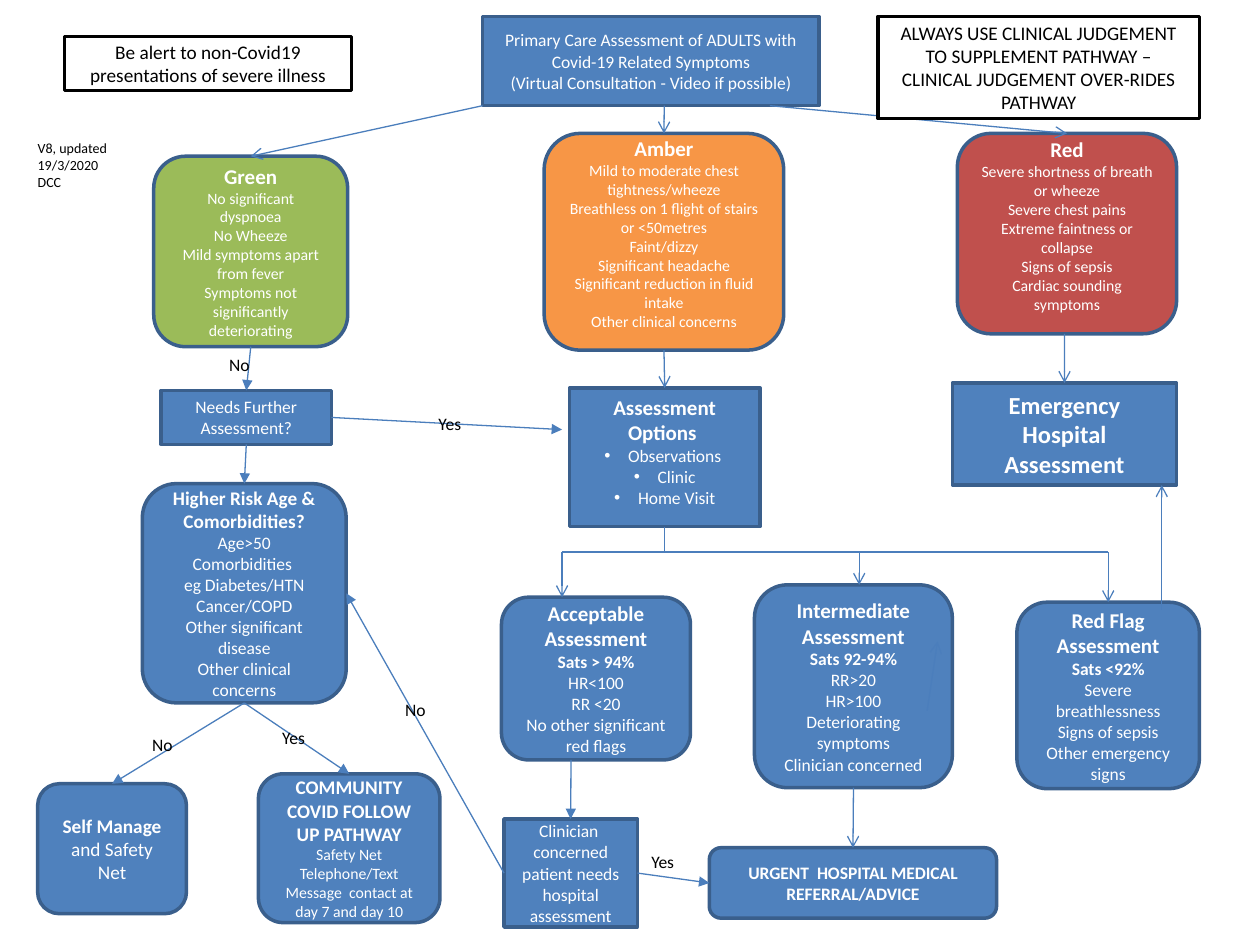
from dataclasses import dataclass

from lxml import etree
from pptx import Presentation
from pptx.dml.color import RGBColor
from pptx.enum.shapes import MSO_CONNECTOR, MSO_SHAPE
from pptx.enum.text import MSO_ANCHOR, MSO_AUTO_SIZE, PP_ALIGN
from pptx.oxml.ns import qn
from pptx.util import Cm, Pt

RECT, ROUND = MSO_SHAPE.RECTANGLE, MSO_SHAPE.ROUNDED_RECTANGLE
STRAIGHT = MSO_CONNECTOR.STRAIGHT
MIDDLE, CENTER, NO_FIT = MSO_ANCHOR.MIDDLE, PP_ALIGN.CENTER, MSO_AUTO_SIZE.NONE
TOP, LEFT, BOTTOM, RIGHT = range(4)
OPEN, SOLID = "arrow", "triangle"


@dataclass(frozen=True)
class Theme:
    font: str = "Calibri"
    blue: str = "4F81BD"
    green: str = "9BBB59"
    amber: str = "F79646"
    red: str = "C0504D"
    outline: str = "3A5F8C"
    link: str = "4B7EBC"
    white: str = "FFFFFF"
    black: str = "000000"
    emergency: int = 14
    heading: int = 12
    note: int = 11
    body: int = 10
    symptom: int = 9
    version: int = 8


THEME = Theme()


def add_text(paragraph, text, size=THEME.body, bold=False, color=THEME.white):
    run = paragraph.add_run()
    run.text = text
    run.font.name = THEME.font
    run.font.size = Pt(size)
    run.font.bold = bold
    run.font.color.rgb = RGBColor.from_string(color)


def body(*lines, size=THEME.body, bold=False):
    return [[(line, size, bold)] for line in lines]


def heading(text, size=THEME.heading):
    return body(text, size=size, bold=True)


def fill_frame(frame, paragraphs, color, align=None):
    frame.word_wrap = True
    for index, runs in enumerate(paragraphs):
        paragraph = frame.add_paragraph() if index else frame.paragraphs[0]
        paragraph.alignment = align
        for text, size, bold in runs:
            add_text(paragraph, text, size=size, bold=bold, color=color)


def style_box(box, paragraphs, fill, outline=THEME.outline, color=THEME.white):
    box.fill.solid()
    box.fill.fore_color.rgb = RGBColor.from_string(fill)
    box.line.color.rgb = RGBColor.from_string(outline)
    box.line.width = Pt(2)
    box.text_frame.auto_size = NO_FIT
    box.text_frame.vertical_anchor = MIDDLE
    fill_frame(box.text_frame, paragraphs, color, CENTER)


def add_box(slide, outline_kind, place, paragraphs, fill=THEME.blue, **style):
    box = slide.shapes.add_shape(outline_kind, *map(Cm, place))
    box.shadow.inherit = False
    style_box(box, paragraphs, fill, **style)
    return box


def add_title(slide, place, lines):
    title = slide.shapes.title
    title.left, title.top, title.width, title.height = map(Cm, place)
    style_box(title, body(*lines), THEME.blue)


def add_note(slide, place, text):
    add_box(slide, RECT, place, body(text, size=THEME.note),
            fill=THEME.white, outline=THEME.black, color=THEME.black)


def add_label(slide, place, *lines, size=THEME.body):
    label = slide.shapes.add_textbox(*map(Cm, place))
    fill_frame(label.text_frame, body(*lines, size=size), THEME.black)


def add_bullets(paragraphs):
    for paragraph in paragraphs:
        properties = paragraph._p.get_or_add_pPr()
        properties.set("marL", str(Cm(0.48)))
        properties.set("indent", str(-Cm(0.48)))
        etree.SubElement(properties, qn("a:buFont"), typeface="Arial")
        etree.SubElement(properties, qn("a:buChar"), char="•")


def add_link(slide, start, end, head=None):
    joins = [not isinstance(place[0], (int, float)) for place in (start, end)]
    points = [(0, 0) if joined else tuple(map(Cm, place))
              for joined, place in zip(joins, (start, end))]
    link = slide.shapes.add_connector(STRAIGHT, *points[0], *points[1])
    if joins[0]:
        link.begin_connect(*start)
    if joins[1]:
        link.end_connect(*end)
    link.line.color.rgb = RGBColor.from_string(THEME.link)
    link.line.width = Pt(0.75)
    properties = link._element.spPr
    if head:
        etree.SubElement(properties.find(qn("a:ln")), qn("a:tailEnd"), type=head)
    etree.SubElement(properties, qn("a:effectLst"))


def add_triage(slide):
    def triage(place, name, fill, *symptoms):
        return add_box(slide, ROUND, place, heading(name)
                       + body(*symptoms, size=THEME.symptom), fill=fill)

    green = triage((3.1, 3.15, 3.91, 3.84), "Green", THEME.green,
                   "No significant dyspnoea", "No Wheeze",
                   "Mild symptoms apart from fever",
                   "Symptoms not significantly deteriorating")
    amber = triage((10.97, 2.69, 4.83, 4.37), "Amber", THEME.amber,
                   "Mild to moderate chest tightness/wheeze",
                   "Breathless on 1 flight of stairs or <50metres",
                   "Faint/dizzy", "Significant headache",
                   "Significant reduction in fluid intake",
                   "Other clinical concerns")
    red = triage((19.3, 2.69, 4.42, 4.04), "Red", THEME.red,
                 "Severe shortness of breath or wheeze", "Severe chest pains",
                 "Extreme faintness or collapse", "Signs of sepsis",
                 "Cardiac sounding symptoms")
    for severe in (amber, red):
        severe.text_frame.margin_bottom = Cm(0.47)
    return green, amber, red


def add_options(slide):
    options = add_box(slide, RECT, (11.48, 7.82, 3.84, 2.8),
                      heading("Assessment Options ")
                      + body("Observations ", "Clinic", "Home Visit"))
    options.text_frame.margin_top = Cm(0)
    options.text_frame.margin_bottom = Cm(0.25)
    add_bullets(options.text_frame.paragraphs[1:])
    return options


def add_assessment(slide, place, name, sats, *signs):
    return add_box(slide, ROUND, place,
                   heading(name) + heading(sats, THEME.body) + body(*signs))


def main():
    prs = Presentation()
    prs.slide_width, prs.slide_height = Cm(25.4), Cm(19.05)
    slide = prs.slides.add_slide(prs.slide_layouts[5])

    add_title(slide, (9.73, 0.33, 6.78, 1.8),
              ("Primary Care Assessment of ADULTS with",
               "Covid-19 Related Symptoms",
               "(Virtual Consultation - Video if possible)"))
    green, amber, red = add_triage(slide)
    emergency = add_box(slide, RECT, (19.2, 7.72, 4.52, 2.06),
                        heading("Emergency Hospital Assessment", THEME.emergency))
    further = add_box(slide, RECT, (3.25, 7.87, 3.43, 1.09),
                      body("Needs Further Assessment?"))
    risk = add_box(slide, ROUND, (2.87, 9.75, 4.11, 4.42),
                   heading("Higher Risk Age & Comorbidities?", THEME.note)
                   + body("Age>50", "Comorbidities ", "eg Diabetes/HTN", "Cancer/COPD",
                          "Other significant disease", "Other clinical concerns"))
    options = add_options(slide)
    self_manage = add_box(slide, ROUND, (0.76, 15.8, 3, 2.62),
                          [[("Self Manage ", THEME.note, True),
                            ("and Safety Net", THEME.note, False)]])
    community = add_box(slide, ROUND, (5.21, 15.6, 3.66, 3),
                        heading("COMMUNITY COVID FOLLOW UP PATHWAY", THEME.note)
                        + body("Safety Net",
                               "Telephone/Text Message  contact at day 7 and day 10",
                               size=THEME.symptom))
    red_flag = add_assessment(slide, (20.5, 12.14, 3.68, 3.76), "Red Flag Assessment",
                              "Sats <92%", "Severe breathlessness", "Signs of sepsis",
                              "Other emergency signs")
    add_assessment(slide, (10.11, 12.04, 3.81, 3.28), "Acceptable Assessment",
                   "Sats > 94%", "HR<100", "RR <20", "No other significant red flags")
    intermediate = add_assessment(slide, (15.21, 11.79, 3.99, 4.09),
                                  "Intermediate Assessment", "Sats 92-94%", "RR>20",
                                  "HR>100", "Deteriorating symptoms",
                                  "Clinician concerned")
    urgent = add_box(slide, ROUND, (14.3, 17.09, 5.79, 1.42),
                     heading("URGENT  HOSPITAL MEDICAL REFERRAL/ADVICE", THEME.body))
    concerned = add_box(slide, RECT, (10.16, 16.51, 2.69, 2.18),
                        body("Clinician  concerned patient needs hospital assessment"))

    for start, end, head in (
        ((9.73, 2.13), (green, TOP), OPEN),
        ((13.39, 2.13), (amber, TOP), OPEN),
        ((15.52, 2.13), (red, TOP), OPEN),
        ((amber, BOTTOM), (options, TOP), OPEN),
        ((21.46, 6.73), (emergency, TOP), OPEN),
        ((18.69, 14.33), (18.9, 12.93), OPEN),
        ((options, BOTTOM), (13.4, 11.13), None),
        ((11.33, 11.13), (22.34, 11.13), None),
        ((11.33, 11.13), (11.33, 12.04), OPEN),
        ((17.32, 11.13), (17.32, 11.79), OPEN),
        ((22.34, 11.13), (red_flag, TOP), OPEN),
        ((intermediate, BOTTOM), (urgent, TOP), OPEN),
        ((23.42, 12.29), (23.42, 9.78), OPEN),
        ((green, BOTTOM), (further, TOP), SOLID),
        ((further, BOTTOM), (risk, TOP), SOLID),
        ((further, RIGHT), (11.33, 8.66), SOLID),
        ((risk, BOTTOM), (self_manage, TOP), SOLID),
        ((risk, BOTTOM), (community, TOP), SOLID),
        ((11.51, 15.32), (concerned, TOP), SOLID),
        ((concerned, RIGHT), (urgent, LEFT), SOLID),
        ((concerned, LEFT), (risk, RIGHT), SOLID),
    ):
        add_link(slide, start, end, head)

    add_note(slide, (17.7, 0.33, 6.48, 2.06),
             "ALWAYS USE CLINICAL JUDGEMENT TO SUPPLEMENT PATHWAY – "
             "CLINICAL JUDGEMENT OVER-RIDES PATHWAY")
    add_note(slide, (1.3, 0.74, 5.79, 1.09),
             "Be alert to non-Covid19 presentations of severe illness")
    for answer, left, top in (("No", 2.82, 14.68), ("Yes", 5.44, 14.53),
                              ("No", 4.37, 7.01), ("Yes", 8.59, 8.2),
                              ("No", 7.92, 13.97), ("Yes", 12.88, 17.04)):
        add_label(slide, (left, top, 1.02, 0.69), answer)
    add_label(slide, (0.51, 2.69, 2.31, 1.27), "V8, updated 19/3/2020", "DCC",
              size=THEME.version)
    prs.save("out.pptx")


if __name__ == "__main__":
    main()
